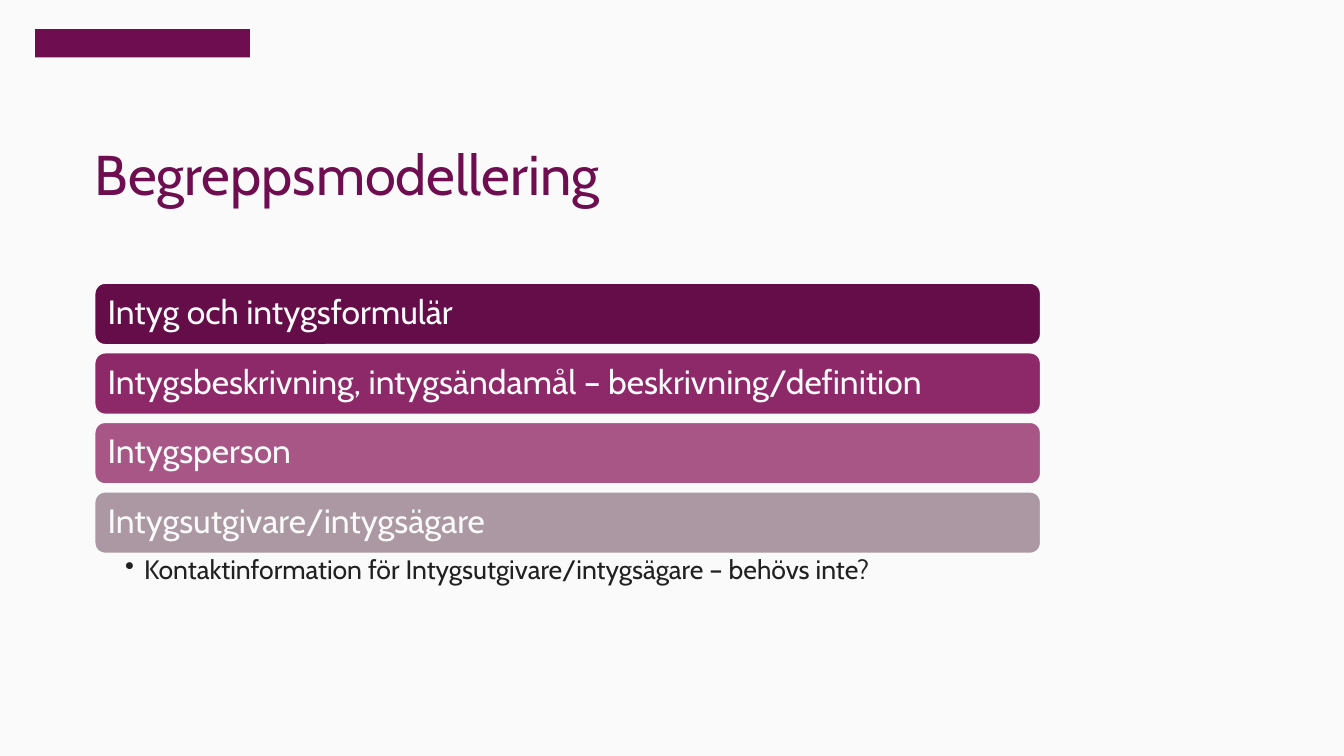
"""Build the concept modelling slide with four topic bars and one bullet."""
from lxml import etree
from pptx import Presentation
from pptx.dml.color import RGBColor
from pptx.enum.shapes import MSO_SHAPE
from pptx.enum.text import MSO_ANCHOR, PP_ALIGN
from pptx.oxml.ns import qn
from pptx.util import Inches, Pt

RECT, ROUNDED = MSO_SHAPE.RECTANGLE, MSO_SHAPE.ROUNDED_RECTANGLE
TOP, MIDDLE, BOTTOM = MSO_ANCHOR.TOP, MSO_ANCHOR.MIDDLE, MSO_ANCHOR.BOTTOM
LEFT = PP_ALIGN.LEFT

TITLE = "Begreppsmodellering"
BARS = [
    ("Intyg och intygsformulär", "640D49"),
    ("Intygsbeskrivning, intygsändamål – beskrivning/definition", "8D2969"),
    ("Intygsperson", "A75685"),
    ("Intygsutgivare/intygsägare", "AB98A2"),
]
BULLET = "Kontaktinformation för Intygsutgivare/intygsägare – behövs inte?"

THEME = {
    "font": "Cabin",
    "light": "FAFAFA", "brand": "6E0E50", "dark": "212121",
    "title": 40, "bar": 24, "bullet": 19,
}
MARGIN, BAR_W, BAR_H = 0.94, 9.38, 0.61
BARS_TOP, BAR_STEP = 2.81, 0.69
BULLET_INDENT = 0.19


def rgb(name):
    return RGBColor.from_string(THEME.get(name, name))


def add_block(s, kind, box, fill, line=None):
    sp = s.shapes.add_shape(kind, *map(Inches, box))
    sp.shadow.inherit = False
    sp.fill.solid()
    sp.fill.fore_color.rgb = rgb(fill)
    if line:
        sp.line.color.rgb = rgb(line)
        sp.line.width = Pt(1)
    else:
        sp.line.fill.background()
    return sp


def write(sp, text, size, color, anchor, insets=(0, 0, 0, 0)):
    tf = sp.text_frame
    tf.word_wrap = True
    tf.vertical_anchor = anchor
    tf.margin_left, tf.margin_top, tf.margin_right, tf.margin_bottom = map(Inches, insets)
    p = tf.paragraphs[0]
    p.alignment = LEFT
    p.line_spacing = 0.9
    r = p.add_run()
    r.text = text
    r.font.name = THEME["font"]
    r.font.size = Pt(THEME[size])
    r.font.color.rgb = rgb(color)
    return p


def add_bullet(p, indent):
    pPr = p._p.get_or_add_pPr()
    pPr.set("marL", str(Inches(indent)))
    pPr.set("indent", str(-Inches(indent)))
    etree.SubElement(pPr, qn("a:buChar")).set("char", "•")


def main():
    prs = Presentation()
    prs.slide_width, prs.slide_height = Inches(13.33), Inches(7.5)
    s = prs.slides.add_slide(prs.slide_layouts[6])
    s.background.fill.solid()
    s.background.fill.fore_color.rgb = rgb("light")

    add_block(s, RECT, (0.35, 0.29, 2.13, 0.28), "brand")

    title = s.shapes.add_textbox(*map(Inches, (MARGIN, 1.45, 11.46, 0.61)))
    write(title, TITLE, "title", "brand", BOTTOM)

    for i, (text, color) in enumerate(BARS):
        box = (MARGIN, BARS_TOP + i * BAR_STEP, BAR_W, BAR_H)
        sp = add_block(s, ROUNDED, box, color, "light")
        write(sp, text, "bar", "light", MIDDLE, (0.1, 0.1, 0.1, 0.1))

    bullet_top = BARS_TOP + (len(BARS) - 1) * BAR_STEP + BAR_H
    note = s.shapes.add_textbox(*map(Inches, (MARGIN, bullet_top, BAR_W, 0.43)))
    p = write(note, BULLET, "bullet", "dark", TOP, (0.3, 0.03, 0.19, 0.03))
    add_bullet(p, BULLET_INDENT)

    prs.save("out.pptx")


if __name__ == "__main__":
    main()
